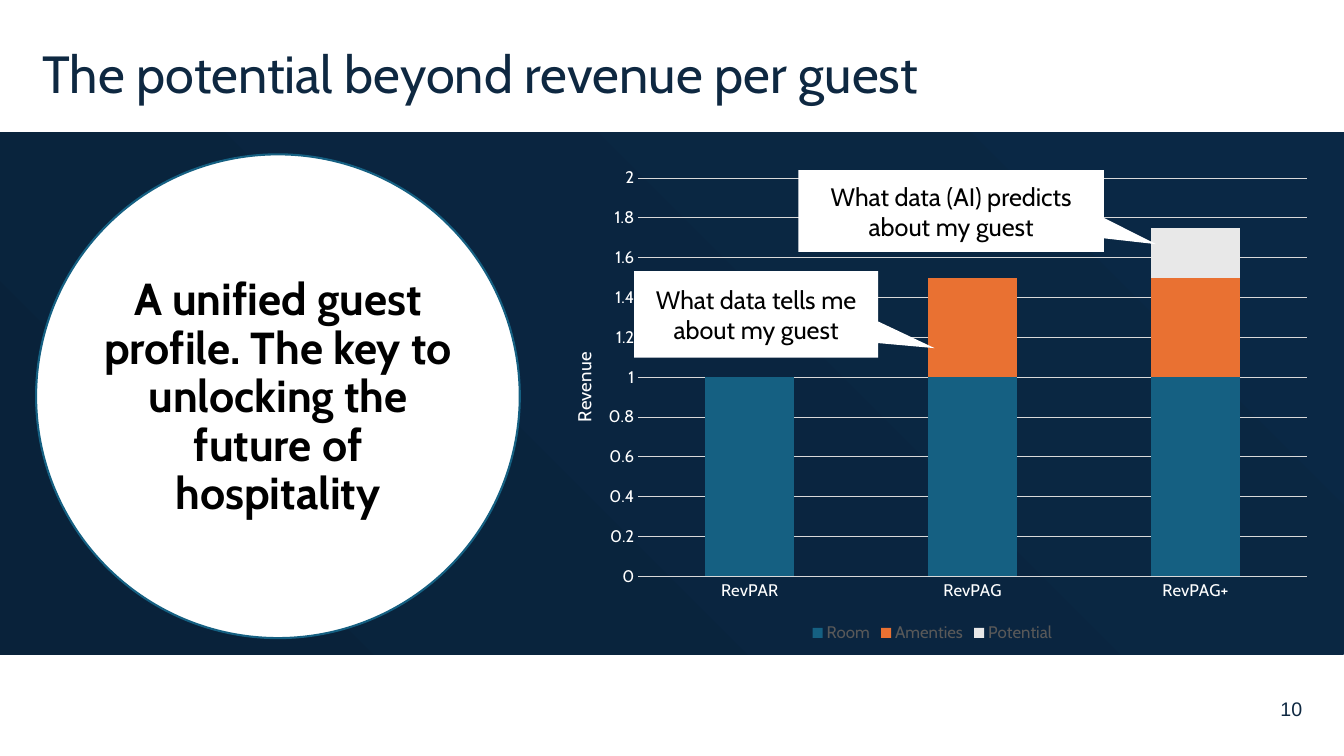
from lxml.etree import SubElement
from pptx import Presentation
from pptx.chart.data import CategoryChartData
from pptx.dml.color import RGBColor
from pptx.enum.chart import XL_CHART_TYPE, XL_LEGEND_POSITION, XL_TICK_MARK
from pptx.enum.shapes import MSO_SHAPE
from pptx.enum.text import MSO_ANCHOR, PP_ALIGN
from pptx.oxml import parse_xml
from pptx.oxml.ns import nsdecls, qn
from pptx.util import Cm, Pt

COLORS = {
    "navy": "0E2841", "band_start": "09223A", "band_end": "0A2845",
    "white": "FFFFFF", "black": "000000", "grid": "D9D9D9", "legend": "595959",
    "room": "156082", "amenities": "E97132", "potential": "E8E8E8",
}
BAND = (0, 3.33, 33.87, 13.16)
CIRCLE = (0.91, 3.89, 12.19, 12.19)
CHART = (13.64, 4.01, 19.71, 12.29)
TEXTS = [
    {"text": "The potential beyond revenue per guest", "box": (1.07, 0.91, 27.64, 2.06),
     "margins": (0, 0, 0, 0), "color": "navy",
     "font": {"name": "Cabin", "size": Pt(37.3)},
     "paragraph": {"alignment": PP_ALIGN.LEFT, "line_spacing": 0.9}},
    {"text": "A unified guest profile. The key to unlocking the future of hospitality",
     "box": (1.98, 6.48, 10.06, 7.11), "margins": (0.25, 0.13, 0.25, 0.13), "color": "black",
     "font": {"name": "Cabin", "size": Pt(32), "bold": True},
     "paragraph": {"alignment": PP_ALIGN.CENTER, "line_spacing": 0.9, "space_before": Pt(10)}},
    {"text": "10", "box": (31.12, 17.37, 1.7, 0.99),
     "margins": (0.25, 0.13, 0, 0.13), "color": "navy",
     "font": {"name": "Arial", "size": Pt(14)},
     "paragraph": {"alignment": PP_ALIGN.RIGHT}},
]
CALLOUTS = [
    ("What data (AI) predicts about my guest", (20.12, 4.29, 7.7, 2.06), (0.671, 0.405)),
    ("What data tells me about my guest", (15.98, 6.83, 6.15, 2.18), (0.732, 0.392)),
]
CATEGORIES = ["RevPAR", "RevPAG", "RevPAG+"]
SERIES = [
    ("Room", (1, 1, 1), "room"),
    ("Amenties", (0, 0.5, 0.5), "amenities"),
    ("Potential", (0, 0, 0.25), "potential"),
]
PLOT_LAYOUT = {"layoutTarget": "inner", "xMode": "edge", "yMode": "edge",
               "x": 0.124, "y": 0.039, "w": 0.855, "h": 0.817}
TITLE_LAYOUT = {"xMode": "edge", "yMode": "edge", "x": 0.034, "y": 0.389}


def rgb(name):
    return RGBColor.from_string(COLORS[name])


def lengths(values):
    return [Cm(value) for value in values]


def set_format(target, values):
    for name, value in values.items():
        setattr(target, name, value)


def set_font(font, color, values):
    set_format(font, values)
    font.color.rgb = rgb(color)


def write_text(shape, text, margins, color, font, paragraph):
    frame = shape.text_frame
    sides = ("margin_left", "margin_top", "margin_right", "margin_bottom")
    set_format(frame, dict(zip(sides, lengths(margins))))
    set_format(frame, {"word_wrap": True, "vertical_anchor": MSO_ANCHOR.MIDDLE})
    first = frame.paragraphs[0]
    set_format(first, paragraph)
    run = first.add_run()
    run.text = text
    set_font(run.font, color, font)


def add_filled_shape(slide, kind, box, color):
    shape = slide.shapes.add_shape(kind, *lengths(box))
    shape.shadow.inherit = False
    shape.fill.solid()
    shape.fill.fore_color.rgb = rgb(color)
    shape.line.fill.background()
    return shape


def add_band(slide):
    band = add_filled_shape(slide, MSO_SHAPE.RECTANGLE, BAND, "band_start")
    band.fill.gradient()
    for stop, position, color in zip(band.fill.gradient_stops, (0, 1), ("band_start", "band_end")):
        stop.position = position
        stop.color.rgb = rgb(color)
    gradient = band._element.spPr.find(qn("a:gradFill"))
    gradient.replace(gradient.find(qn("a:lin")), parse_xml(
        f'<a:path {nsdecls("a")} path="circle"><a:fillToRect t="100000" r="100000"/></a:path>'))


def set_layout(parent, values, index):
    for old in parent.findall(qn("c:layout")):
        parent.remove(old)
    layout = parse_xml(f'<c:layout {nsdecls("c")}/>')
    manual = SubElement(layout, qn("c:manualLayout"))
    for name, value in values.items():
        SubElement(manual, qn(f"c:{name}")).set("val", str(value))
    parent.insert(index, layout)


def add_revenue_chart(slide):
    data = CategoryChartData()
    data.categories = CATEGORIES
    for name, values, color in SERIES:
        data.add_series(name, values)
    chart = slide.shapes.add_chart(XL_CHART_TYPE.COLUMN_STACKED, *lengths(CHART), data).chart
    set_format(chart, {"has_title": False, "has_legend": True})
    set_font(chart.font, "black", {"name": "Cabin", "size": Pt(10)})
    label_font = {"name": "Cabin", "size": Pt(12)}
    set_format(chart.legend, {"position": XL_LEGEND_POSITION.BOTTOM, "include_in_layout": False})
    set_font(chart.legend.font, "legend", label_font)

    plot = chart.plots[0]
    set_format(plot, {"gap_width": 150, "overlap": 100, "vary_by_categories": False})
    for series, (name, values, color) in zip(plot.series, SERIES):
        series.format.fill.solid()
        series.format.fill.fore_color.rgb = rgb(color)

    for axis in (chart.category_axis, chart.value_axis):
        set_format(axis, {"major_tick_mark": XL_TICK_MARK.NONE, "minor_tick_mark": XL_TICK_MARK.NONE})
        set_font(axis.tick_labels.font, "white", label_font)
    value_axis = chart.value_axis
    set_format(value_axis, {"minimum_scale": 0, "maximum_scale": 2, "major_unit": 0.2,
                            "has_major_gridlines": True})
    value_axis.format.line.fill.background()
    for line in (chart.category_axis.format.line, value_axis.major_gridlines.format.line):
        line.color.rgb = rgb("grid")
        line.width = Pt(0.75)

    title = value_axis.axis_title
    title.text_frame.text = "Revenue"
    set_font(title.text_frame.paragraphs[0].runs[0].font, "white",
             {"name": "Cabin", "size": Pt(13.3), "bold": False})
    title.text_frame._txBody.bodyPr.set("rot", "-5400000")
    title.text_frame._txBody.bodyPr.set("vert", "horz")
    set_layout(title._element, TITLE_LAYOUT, 1)
    set_layout(chart._chartSpace.chart.plotArea, PLOT_LAYOUT, 0)


def main():
    presentation = Presentation()
    set_format(presentation, {"slide_width": Cm(33.87), "slide_height": Cm(19.05)})
    slide = presentation.slides.add_slide(presentation.slide_layouts[6])
    add_band(slide)
    circle = add_filled_shape(slide, MSO_SHAPE.OVAL, CIRCLE, "white")
    circle.line.color.rgb = rgb("room")
    circle.line.width = Pt(1.5)
    for item in TEXTS:
        text_box = slide.shapes.add_textbox(*lengths(item["box"]))
        write_text(text_box, item["text"], item["margins"], item["color"],
                   item["font"], item["paragraph"])
    add_revenue_chart(slide)
    for text, box, tip in CALLOUTS:
        callout = add_filled_shape(slide, MSO_SHAPE.RECTANGULAR_CALLOUT, box, "white")
        for index, offset in enumerate(tip):
            callout.adjustments[index] = offset
        write_text(callout, text, (0.25, 0.13, 0.25, 0.13), "black",
                   {"name": "Cabin", "size": Pt(18)}, {"alignment": PP_ALIGN.CENTER})
    presentation.save("out.pptx")


if __name__ == "__main__":
    main()
